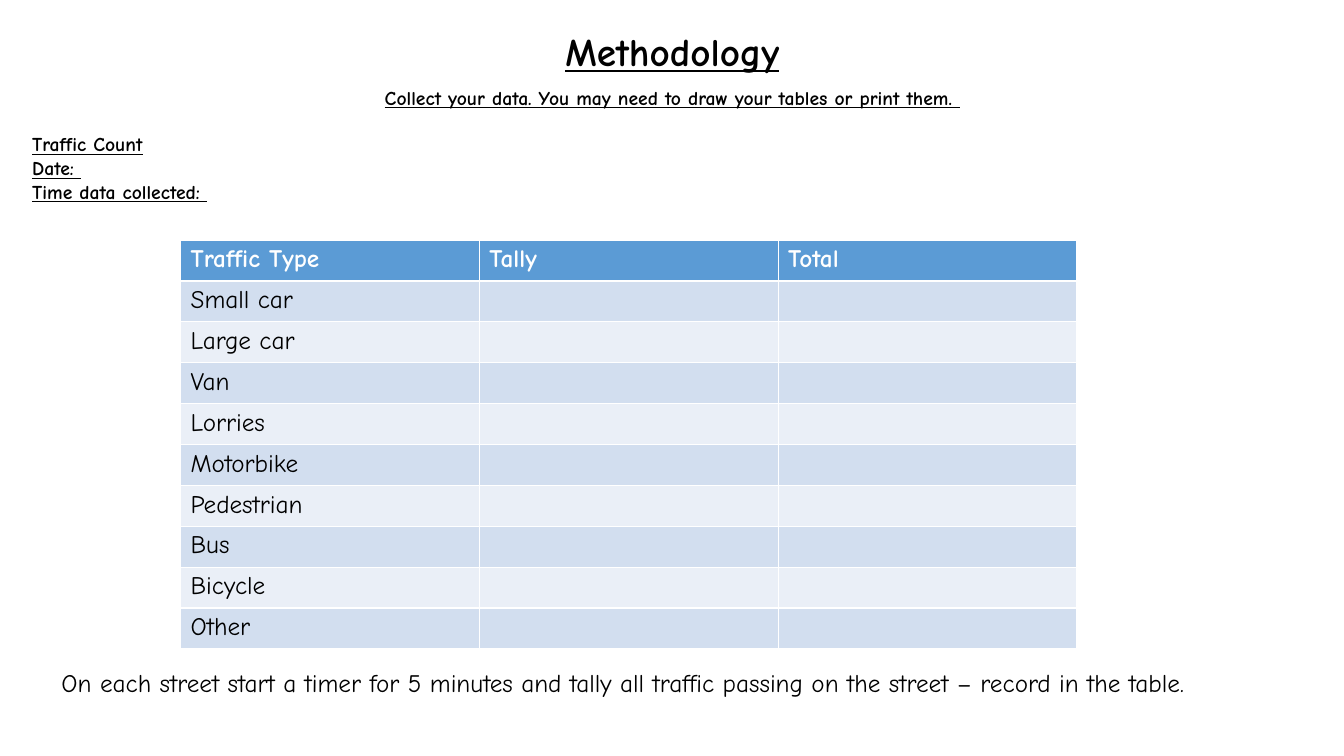
from dataclasses import dataclass

from pptx import Presentation
from pptx.dml.color import RGBColor
from pptx.enum.text import PP_ALIGN
from pptx.slide import Slide
from pptx.text.text import TextFrame
from pptx.util import Cm, Pt

LEFT, CENTER = PP_ALIGN.LEFT, PP_ALIGN.CENTER
FONT = "Comic Neue"
BLACK, WHITE = "000000", "FFFFFF"
HEADER_FILL = "5B9BD5"
BAND_FILLS = ("D2DEEF", "EAEFF7")

HEADINGS = ("Traffic Type", "Tally", "Total")
TRAFFIC_TYPES = ("Small car", "Large car", "Van", "Lorries", "Motorbike",
                 "Pedestrian", "Bus", "Bicycle", "Other")
COLUMN_WIDTH, ROW_HEIGHT = 7.53, 1.03


@dataclass
class Line:
    text: str
    size: float = 14
    bold: bool = True
    underline: bool = True
    align: PP_ALIGN = LEFT
    space_before: float = 0


@dataclass
class TextBlock:
    left: float
    top: float
    width: float
    height: float
    lines: list[Line]


BLOCKS = [
    TextBlock(0.56, 0.56, 32.77, 1.45, [Line("Methodology", size=28, align=CENTER)]),
    TextBlock(0.56, 2.03, 32.77, 4.45, [
        Line("Collect your data. You may need to draw your tables or print them. ",
             align=CENTER),
        Line("Traffic Count", space_before=16.7),
        Line("Date: "),
        Line("Time data collected: "),
    ]),
    TextBlock(1.3, 16.69, 31.29, 1.8, [
        Line("On each street start a timer for 5 minutes and tally all traffic "
             "passing on the street – record in the table.",
             size=18, bold=False, underline=False),
    ]),
]


def rgb(value: str) -> RGBColor:
    return RGBColor.from_string(value)


def write(frame: TextFrame, text: str, *, size: float = 18, bold: bool = False,
          underline: bool = False, color: str = BLACK, align: PP_ALIGN = LEFT,
          space_before: float = 0, new_paragraph: bool = False) -> None:
    paragraph = frame.add_paragraph() if new_paragraph else frame.paragraphs[0]
    paragraph.alignment = align
    paragraph.space_before = Pt(space_before)
    run = paragraph.add_run()
    run.text = text
    font = run.font
    font.name, font.size = FONT, Pt(size)
    font.bold, font.underline = bold, underline
    font.color.rgb = rgb(color)


def draw_block(slide: Slide, block: TextBlock) -> None:
    box = slide.shapes.add_textbox(Cm(block.left), Cm(block.top),
                                   Cm(block.width), Cm(block.height))
    frame = box.text_frame
    frame.word_wrap = True
    for index, line in enumerate(block.lines):
        write(frame, line.text, size=line.size, bold=line.bold,
              underline=line.underline, align=line.align,
              space_before=line.space_before, new_paragraph=index > 0)


def draw_traffic_table(slide: Slide, left: float, top: float) -> None:
    rows = [HEADINGS] + [(traffic, "", "") for traffic in TRAFFIC_TYPES]
    # The default table style supplies the white rules between cells
    table = slide.shapes.add_table(
        len(rows), len(HEADINGS), Cm(left), Cm(top),
        Cm(COLUMN_WIDTH * len(HEADINGS)), Cm(ROW_HEIGHT * len(rows))).table
    for column in table.columns:
        column.width = Cm(COLUMN_WIDTH)
    for row_index, texts in enumerate(rows):
        table.rows[row_index].height = Cm(ROW_HEIGHT)
        is_header = row_index == 0
        fill = HEADER_FILL if is_header else BAND_FILLS[(row_index - 1) % 2]
        for column_index, text in enumerate(texts):
            cell = table.cell(row_index, column_index)
            cell.fill.solid()
            cell.fill.fore_color.rgb = rgb(fill)
            if text:
                write(cell.text_frame, text, bold=is_header,
                      color=WHITE if is_header else BLACK)


def main() -> None:
    presentation = Presentation()
    presentation.slide_width, presentation.slide_height = Cm(33.87), Cm(19.05)
    slide = presentation.slides.add_slide(presentation.slide_layouts[6])

    # Title, instructions and closing note
    for block in BLOCKS:
        draw_block(slide, block)

    # Tally table
    draw_traffic_table(slide, 4.55, 6.05)

    presentation.save("out.pptx")


if __name__ == "__main__":
    main()
